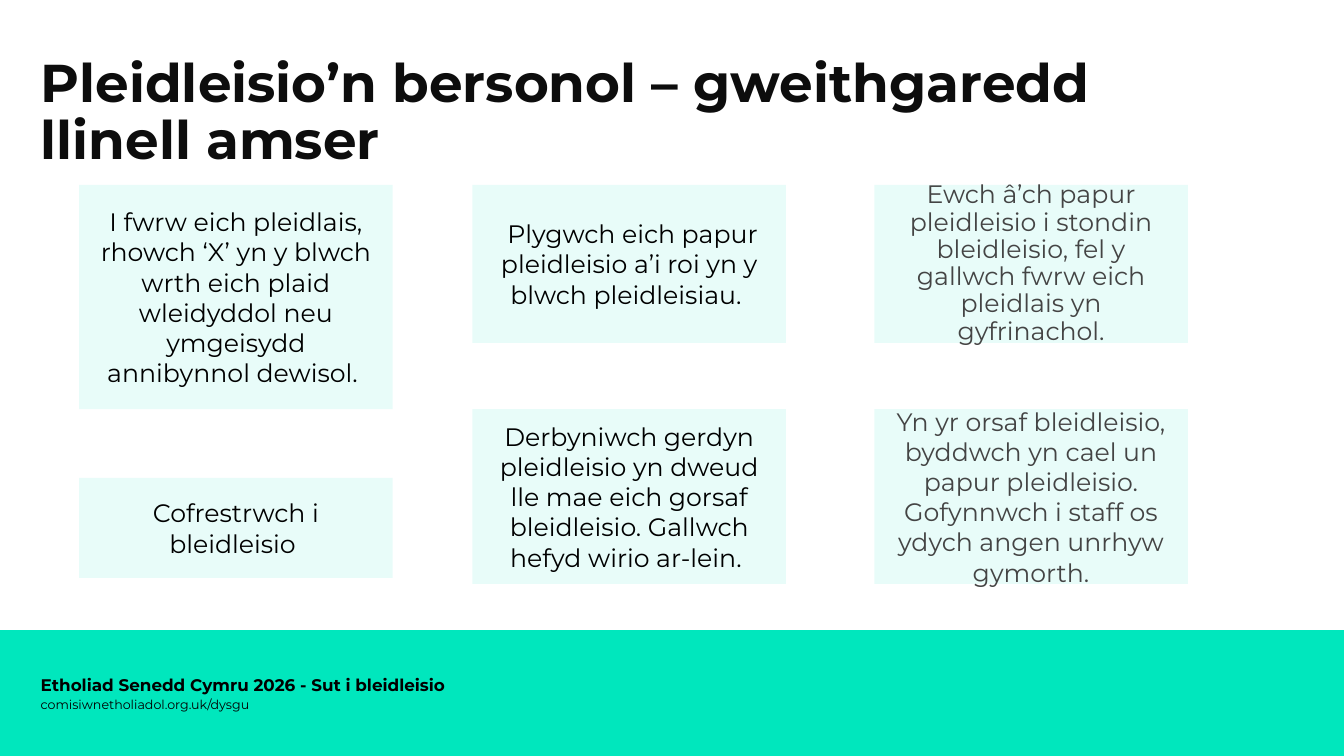
from lxml import etree
from pptx import Presentation
from pptx.dml.color import RGBColor
from pptx.enum.shapes import MSO_SHAPE
from pptx.enum.text import MSO_ANCHOR, MSO_AUTO_SIZE, PP_ALIGN
from pptx.oxml.ns import qn
from pptx.util import Pt

RECTANGLE = MSO_SHAPE.RECTANGLE
TOP, MIDDLE = MSO_ANCHOR.TOP, MSO_ANCHOR.MIDDLE
LEFT, CENTER = PP_ALIGN.LEFT, PP_ALIGN.CENTER
NO_AUTOFIT = MSO_AUTO_SIZE.NONE
COLORS = {"green": "00E7BD", "black": "000000", "title": "0D0D0D", "grey": "444444"}


def add_rectangle(left, top, width, height):
    shape = slide.shapes.add_shape(RECTANGLE, Pt(left), Pt(top), Pt(width), Pt(height))
    shape.shadow.inherit = False
    shape.fill.solid()
    shape.fill.fore_color.rgb = RGBColor.from_string(COLORS["green"])
    shape.line.fill.background()
    return shape


def write_text(shape, text, size, color, bold=False, anchor=MIDDLE, align=LEFT,
               spacing=1.0, inset_x=7.2, inset_y=3.6):
    frame = shape.text_frame
    frame_format = {
        "word_wrap": True, "auto_size": NO_AUTOFIT, "vertical_anchor": anchor,
        "margin_left": Pt(inset_x), "margin_right": Pt(inset_x),
        "margin_top": Pt(inset_y), "margin_bottom": Pt(inset_y),
    }
    for name, value in frame_format.items():
        setattr(frame, name, value)
    paragraph = frame.paragraphs[0]
    paragraph.alignment = align
    paragraph.line_spacing = spacing
    run = paragraph.add_run()
    run.text = text
    for name, value in {"name": "Montserrat", "size": Pt(size), "bold": bold}.items():
        setattr(run.font, name, value)
    run.font.color.rgb = RGBColor.from_string(COLORS[color])


presentation = Presentation()
presentation.slide_width = Pt(960)
presentation.slide_height = Pt(540)
slide = presentation.slides.add_slide(presentation.slide_layouts[5])

add_rectangle(0, 450, 960, 90)

title = slide.shapes.title
title_place = {"left": 21.8, "top": 36.7, "width": 811.4, "height": 48.2}
for name, value in title_place.items():
    setattr(title, name, Pt(value))
write_text(title, "Pleidleisio’n bersonol – gweithgaredd llinell amser", 38, "title",
           bold=True, anchor=TOP, spacing=0.9)

footer_lines = [
    (474.5, "Etholiad Senedd Cymru 2026 - Sut i bleidleisio", 12, True),
    (488.9, "comisiwnetholiadol.org.uk/dysgu", 9, False),
]
for top, text, size, bold in footer_lines:
    footer = slide.shapes.add_textbox(Pt(22), Pt(top), Pt(551), Pt(28.8))
    write_text(footer, text, size, "black", bold=bold)

CARD_WIDTH = 224
COLUMNS = [56.5, 337.5, 624.5]
UPPER, LOWER = 132, 292.3
cards = [
    (0, UPPER, 160.3, "black", 1.0,
     "I fwrw eich pleidlais, rhowch ‘X’ yn y blwch wrth eich plaid wleidyddol "
     "neu ymgeisydd annibynnol dewisol. "),
    (1, UPPER, 113, "black", 1.0,
     " Plygwch eich papur pleidleisio a’i roi yn y blwch pleidleisiau. "),
    (2, UPPER, 113, "grey", 0.9,
     "Ewch â’ch papur pleidleisio i stondin bleidleisio, fel y gallwch fwrw eich "
     "pleidlais yn gyfrinachol."),
    (0, 341.3, 71.5, "black", 1.0, "Cofrestrwch i bleidleisio "),
    (1, LOWER, 124.7, "black", 1.0,
     "Derbyniwch gerdyn pleidleisio yn dweud lle mae eich gorsaf bleidleisio. "
     "Gallwch hefyd wirio ar-lein. "),
    (2, LOWER, 124.7, "grey", 1.0,
     "Yn yr orsaf bleidleisio, byddwch yn cael un papur pleidleisio. Gofynnwch i "
     "staff os ydych angen unrhyw gymorth."),
]
for column, top, height, color, spacing, text in cards:
    card = add_rectangle(COLUMNS[column], top, CARD_WIDTH, height)
    fill_color = card.fill._xPr.find(qn("a:solidFill"))[0]
    etree.SubElement(fill_color, qn("a:alpha")).set("val", "9000")
    write_text(card, text, 18, color, align=CENTER, spacing=spacing,
               inset_x=14.4, inset_y=14.4)

presentation.save("out.pptx")
